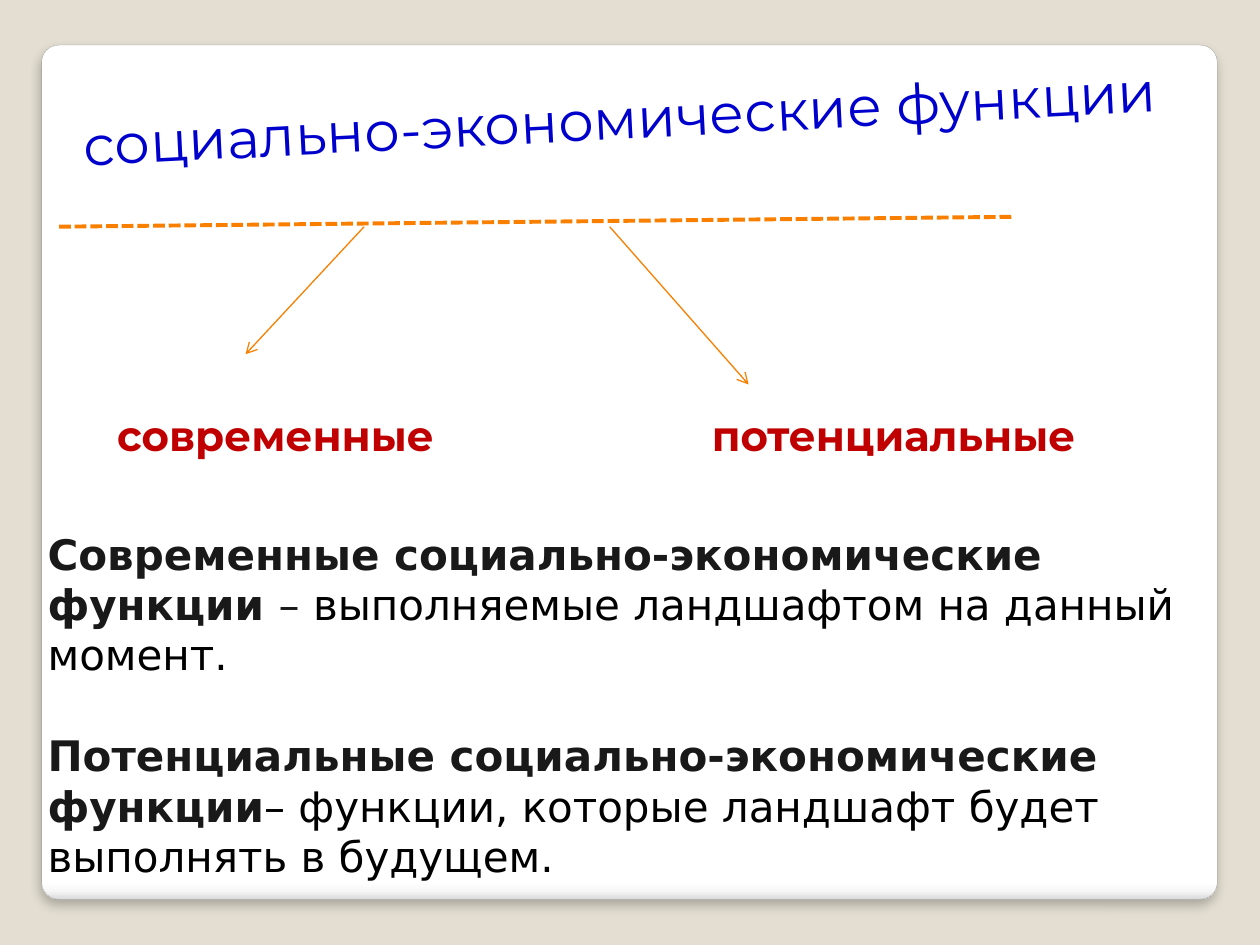
from lxml.etree import SubElement
from pptx import Presentation
from pptx.dml.color import RGBColor
from pptx.enum.dml import MSO_LINE
from pptx.enum.shapes import MSO_CONNECTOR, MSO_SHAPE
from pptx.enum.text import PP_ALIGN
from pptx.oxml.ns import qn
from pptx.util import Cm, Pt


def rgb(code):
    return RGBColor.from_string(code)


def add(node, tag, **attrs):
    return SubElement(node, qn(tag), {k: str(v) for k, v in attrs.items()})


def tint(node, code):
    return add(node, "a:srgbClr", val=code)


class Page:
    ORANGE = "F97F00"
    HEAD = {"name": "Montserrat", "size": Pt(32), "color": "0000CC"}
    LABEL = {"name": "Montserrat", "size": Pt(24), "bold": True, "color": "C00000"}
    PLAIN = {"name": "DejaVu Sans", "size": Pt(24), "bold": False, "color": "000000"}
    DARK = {**PLAIN, "color": "191919"}
    TERM = {**DARK, "bold": True}

    def __init__(self, deck):
        self.slide = deck.slides.add_slide(deck.slide_layouts[6])
        self.shapes = self.slide.shapes

    def back(self, code):
        fill = self.slide.background.fill
        fill.solid()
        fill.fore_color.rgb = rgb(code)

    def card(self, box, stops):
        """Rounded panel with a downward gradient and a soft shadow."""
        card = self.shapes.add_shape(MSO_SHAPE.ROUNDED_RECTANGLE, *map(Cm, box))
        card.adjustments[0] = 0.02
        card.fill.gradient()
        card.line.color.rgb = rgb("A4A4A4")
        card.line.width = Pt(0.16)
        card.shadow.inherit = False
        props = card.element.spPr
        grad = props.find(qn("a:gradFill"))
        for child in list(grad):
            grad.remove(child)
        group = add(grad, "a:gsLst")
        for pos, code in stops:
            tint(add(group, "a:gs", pos=pos * 1000), code)
        add(grad, "a:lin", ang=90 * 60000, scaled=0)
        shade = add(props.find(qn("a:effectLst")), "a:outerShdw", blurRad=Pt(6),
                    dist=Pt(4), dir=90 * 60000, algn="t", rotWithShape=0)
        add(tint(shade, "000000"), "a:alpha", val=25000)

    def line(self, start, end, width=0.75, dash=None, arrow=False):
        line = self.shapes.add_connector(
            MSO_CONNECTOR.STRAIGHT, *map(Cm, start + end))
        line.line.color.rgb = rgb(self.ORANGE)
        line.line.width = Pt(width)
        if dash:
            line.line.dash_style = dash
        if arrow:
            add(line.line._get_or_add_ln(), "a:tailEnd", type="arrow")
        add(line.element.spPr, "a:effectLst")

    def text(self, box, paras, turn=0, **form):
        """Text box; each paragraph is a list of (words, style) runs."""
        shape = self.shapes.add_textbox(*map(Cm, box))
        shape.rotation = turn
        frame = shape.text_frame
        frame.word_wrap = True
        for i, runs in enumerate(paras):
            para = frame.add_paragraph() if i else frame.paragraphs[0]
            for key, value in form.items():
                if i or key != "space_before":
                    setattr(para, key, value)
            for words, style in runs:
                run = para.add_run()
                run.text = words
                for key, value in style.items():
                    if key == "color":
                        run.font.color.rgb = rgb(value)
                    else:
                        setattr(run.font, key, value)


def main():
    deck = Presentation()
    deck.slide_width, deck.slide_height = Cm(25.4), Cm(19.05)
    page = Page(deck)
    page.back("E3DED1")
    page.card((0.84, 0.91, 23.7, 17.22),
              [(0, "FFFFFF"), (98, "FFFFFF"), (99, "F7F7F7"), (100, "DADADA")])
    page.text((0.76, 1.55, 23.55, 3),
              [[("социально-экономические функции", page.HEAD)]],
              turn=357.1, alignment=PP_ALIGN.CENTER)

    for start, end in [((7.34, 4.57), (4.95, 7.14)),
                       ((12.29, 4.57), (15.09, 7.75))]:
        page.line(start, end, arrow=True)
    page.line((1.19, 4.57), (20.45, 4.37), 2.25, MSO_LINE.SQUARE_DOT)

    for left, width, word in [(2.11, 7.19, "современные"),
                              (14.1, 8.2, "потенциальные")]:
        page.text((left, 8.13, width, 1.27), [[(word, page.LABEL)]])

    page.text((0.71, 10.52, 24, 8.97), [
        [("Современные социально-экономические функции ", page.TERM),
         ("– ", page.DARK),
         ("выполняемые ландшафтом на данный момент.", page.PLAIN)],
        [("Потенциальные социально-экономические функции", page.TERM),
         ("– функции, которые ландшафт будет выполнять в будущем.", page.PLAIN)],
    ], line_spacing=Pt(28.8), space_before=Pt(28.8))
    deck.save("out.pptx")


if __name__ == "__main__":
    main()
